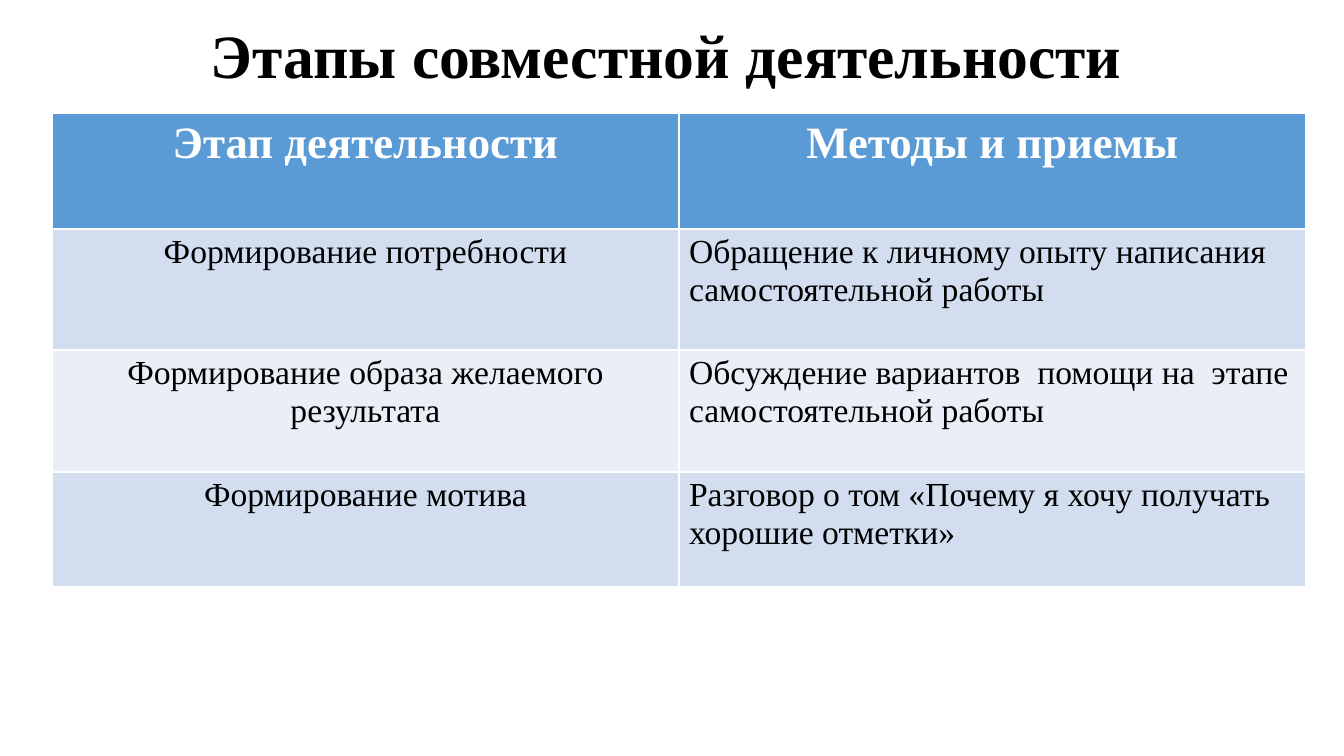
"""Build a slide with a table of the stages of joint activity."""
from dataclasses import dataclass

from pptx import Presentation
from pptx.dml.color import RGBColor as RGB
from pptx.enum.text import MSO_ANCHOR as ANCHOR, PP_ALIGN as ALIGN
from pptx.util import Pt


@dataclass(frozen=True)
class Theme:
    font: str = "Times New Roman"
    title_size: int = 44
    header_size: int = 32
    body_size: int = 24
    dark: str = "000000"
    light: str = "FFFFFF"
    header_fill: str = "5B9BD5"
    bands: tuple = ("D2DEEF", "EAEFF7")


theme = Theme()
EMU_PER_PX = 914400 / 100.8


def px(*lengths):
    return [round(n * EMU_PER_PX) for n in lengths]


def write(tf, text, size, color, bold, align):
    tf.text = text
    p = tf.paragraphs[0]
    p.alignment = align
    font = p.runs[0].font
    font.name, font.size, font.bold = theme.font, Pt(size), bold
    font.color.rgb = RGB.from_string(color)


prs = Presentation()
prs.slide_width, prs.slide_height = px(1344, 756)
s = prs.slides.add_slide(prs.slide_layouts[6])

tf = s.shapes.add_textbox(*px(87, 0, 1159, 118)).text_frame
tf.word_wrap = True
tf.vertical_anchor = ANCHOR.MIDDLE
write(tf, "Этапы совместной деятельности", theme.title_size, theme.dark, True, ALIGN.CENTER)
tf.paragraphs[0].line_spacing = 0.9

stages = [
    ("Этап деятельности", "Методы и приемы"),
    ("Формирование потребности", "Обращение к личному опыту написания самостоятельной работы"),
    ("Формирование образа желаемого результата",
     "Обсуждение вариантов  помощи на  этапе самостоятельной работы"),
    ("Формирование мотива", "Разговор о том «Почему я хочу получать хорошие отметки»"),
]
row_heights = px(116, 121, 122, 115)

table = s.shapes.add_table(len(stages), 2, *px(52, 113, 1254, 474)).table
for row, height in zip(table.rows, row_heights):
    row.height = height

for i, stage in enumerate(stages):
    header = i == 0
    fill = theme.header_fill if header else theme.bands[(i - 1) % 2]
    size = theme.header_size if header else theme.body_size
    color = theme.light if header else theme.dark
    for j, text in enumerate(stage):
        cell = table.cell(i, j)
        cell.fill.solid()
        cell.fill.fore_color.rgb = RGB.from_string(fill)
        align = ALIGN.CENTER if header or j == 0 else ALIGN.LEFT
        write(cell.text_frame, text, size, color, header, align)

prs.save("out.pptx")
